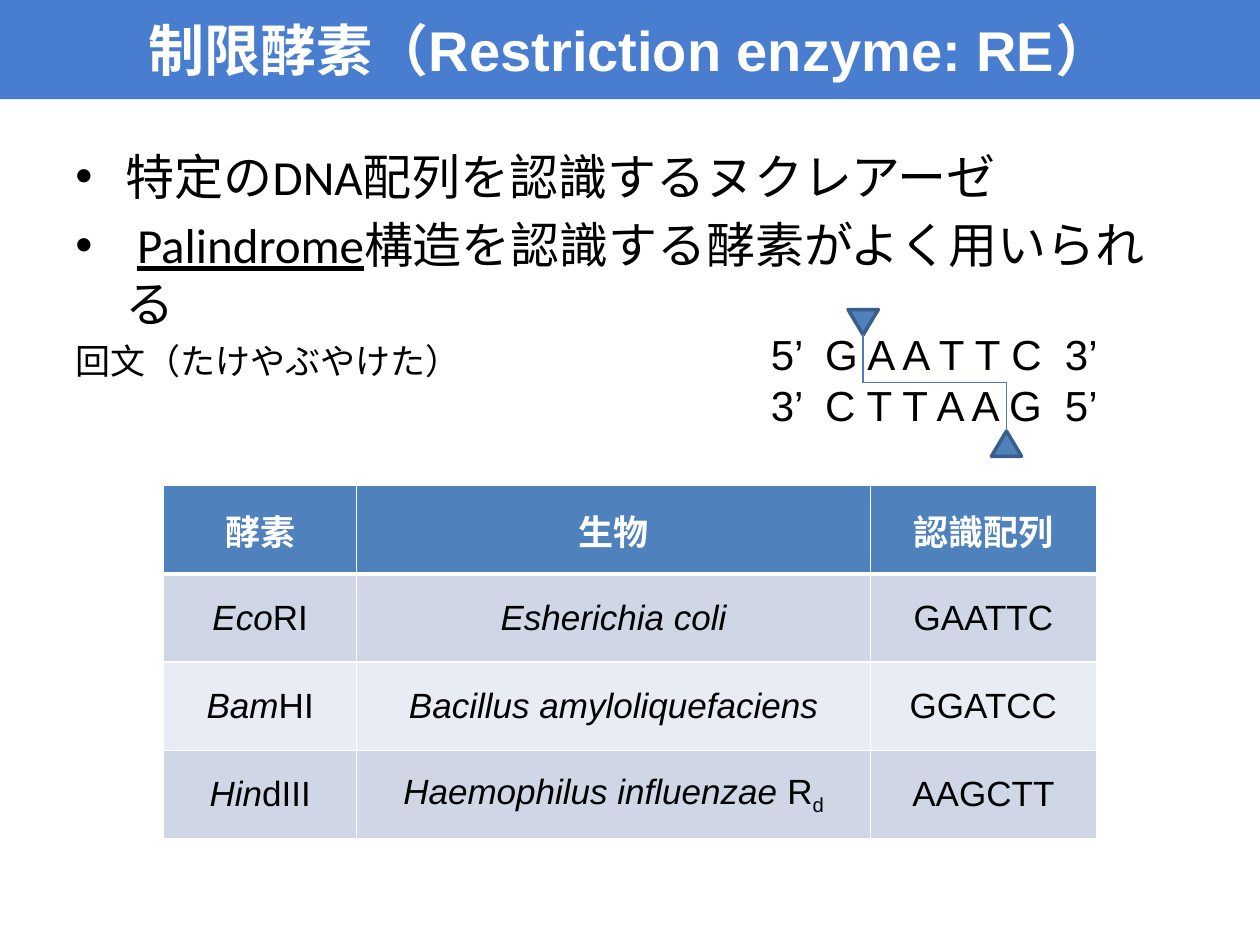
from dataclasses import dataclass

from lxml import etree
from pptx import Presentation
from pptx.dml.color import RGBColor
from pptx.enum.shapes import MSO_CONNECTOR, MSO_SHAPE
from pptx.enum.text import MSO_ANCHOR, MSO_AUTO_SIZE, PP_ALIGN
from pptx.oxml.ns import qn
from pptx.util import Cm, Pt

ELBOW = MSO_CONNECTOR.ELBOW
RECTANGLE = MSO_SHAPE.RECTANGLE
TRIANGLE = MSO_SHAPE.ISOSCELES_TRIANGLE
MIDDLE = MSO_ANCHOR.MIDDLE
TOP = MSO_ANCHOR.TOP
CENTER = PP_ALIGN.CENTER
NO_AUTOFIT = MSO_AUTO_SIZE.NONE
TITLE_ONLY = 5


@dataclass(frozen=True)
class Theme:
    heading_font: str = "Arial"
    body_font: str = "Calibri"
    title_size: int = 32
    body_size: int = 28
    sequence_size: int = 24
    small_size: int = 20
    white: str = "FFFFFF"
    black: str = "000000"
    banner: str = "487DCF"
    accent: str = "4F81BD"
    accent_edge: str = "395E89"
    cut_line: str = "4A7DBA"
    bands: tuple = ("CFD7E7", "E8ECF4")


THEME = Theme()


def color(value):
    return RGBColor.from_string(value)


def add_run(paragraph, text, size, font=THEME.heading_font, fill=THEME.black,
            bold=False, italic=False, underline=False):
    run = paragraph.add_run()
    run.text = text
    run.font.size = Pt(size)
    run.font.name = font
    run.font.bold = bold
    run.font.italic = italic
    run.font.underline = underline
    run.font.color.rgb = color(fill)
    return run


def add_bullet(paragraph, indent):
    properties = paragraph._p.get_or_add_pPr()
    properties.set("marL", str(indent))
    properties.set("indent", str(-indent))
    bullet_color = etree.SubElement(properties, qn("a:buClr"))
    etree.SubElement(bullet_color, qn("a:srgbClr"), val=THEME.black)
    etree.SubElement(properties, qn("a:buFont"), typeface="Arial")
    etree.SubElement(properties, qn("a:buChar"), char="•")


def add_title(slide, width):
    title = slide.shapes.title
    title.left, title.top, title.width, title.height = 0, 0, width, Cm(1.98)
    banner = slide.shapes.add_shape(RECTANGLE, 0, 0, width, Cm(2))
    banner.shadow.inherit = False
    banner.fill.solid()
    banner.fill.fore_color.rgb = color(THEME.banner)
    banner.line.fill.background()
    title.element.addprevious(banner.element)

    frame = title.text_frame
    frame.vertical_anchor = MIDDLE
    frame.auto_size = NO_AUTOFIT
    paragraph = frame.paragraphs[0]
    paragraph.alignment = CENTER
    add_run(paragraph, "制限酵素（Restriction enzyme: RE）", THEME.title_size,
            fill=THEME.white, bold=True)


def add_text_box(slide, left, top, width, height):
    frame = slide.shapes.add_textbox(left, top, width, height).text_frame
    frame.word_wrap = True
    frame.vertical_anchor = TOP
    return frame


def add_body(slide):
    frame = add_text_box(slide, Cm(1.27), Cm(2.82), Cm(22.86), Cm(14.2))
    definition = frame.paragraphs[0]
    add_bullet(definition, Cm(1.02))
    add_run(definition, "特定のDNA配列を認識するヌクレアーゼ", THEME.body_size, THEME.body_font)

    palindrome = frame.add_paragraph()
    add_bullet(palindrome, Cm(1.02))
    palindrome.space_before = Pt(5.6)
    for text, underline in ((" ", False), ("Palindrome", True),
                            ("構造を認識する酵素がよく用いられる", False)):
        add_run(palindrome, text, THEME.body_size, THEME.body_font, underline=underline)

    example = frame.add_paragraph()
    example.space_before = Pt(4)
    add_run(example, "回文（たけやぶやけた）", THEME.small_size, THEME.body_font)


def set_bottom_border(cell, width):
    border = etree.Element(qn("a:lnB"), w=str(width))
    fill = etree.SubElement(border, qn("a:solidFill"))
    etree.SubElement(fill, qn("a:srgbClr"), val=THEME.white)
    cell._tc.get_or_add_tcPr().insert(0, border)


def fill_cell(cell, runs, fill, header):
    cell.fill.solid()
    cell.fill.fore_color.rgb = color(fill)
    cell.vertical_anchor = MIDDLE
    paragraph = cell.text_frame.paragraphs[0]
    paragraph.alignment = CENTER
    for text, style in runs:
        run = add_run(paragraph, text, THEME.small_size, bold=header,
                      italic=style == "italic",
                      fill=THEME.white if header else THEME.black)
        if style == "subscript":
            run.font._element.set("baseline", "-25000")
    if header:
        set_bottom_border(cell, Pt(3))


def add_enzyme_table(slide):
    rows = [
        [[("酵素", "")], [("生物", "")], [("認識配列", "")]],
        [[("Eco", "italic"), ("RI", "")], [("Esherichia coli", "italic")],
         [("GAATTC", "")]],
        [[("Bam", "italic"), ("HI", "")], [("Bacillus amyloliquefaciens", "italic")],
         [("GGATCC", "")]],
        [[("Hin", "italic"), ("dIII", "")],
         [("Haemophilus influenzae ", "italic"), ("R", ""), ("d", "subscript")],
         [("AAGCTT", "")]],
    ]
    widths = [Cm(3.89), Cm(10.36), Cm(4.55)]
    row_height = Cm(1.78)
    table = slide.shapes.add_table(len(rows), len(widths), Cm(3.3), Cm(9.79),
                                   sum(widths), row_height * len(rows)).table
    for column, width in zip(table.columns, widths):
        column.width = width
    for row_index, row in enumerate(rows):
        header = row_index == 0
        fill = THEME.accent if header else THEME.bands[(row_index - 1) % 2]
        for column_index, runs in enumerate(row):
            fill_cell(table.cell(row_index, column_index), runs, fill, header)


def add_sequence(slide):
    frame = add_text_box(slide, Cm(15.29), Cm(6.5), Cm(7.16), Cm(2.31))
    add_run(frame.paragraphs[0], "5’  G A A T T C  3’", THEME.sequence_size)
    add_run(frame.add_paragraph(), "3’  C T T A A G  5’", THEME.sequence_size)


def add_cut_marker(slide, center_x, top, rotation):
    width, height = Cm(0.61), Cm(0.51)
    marker = slide.shapes.add_shape(TRIANGLE, center_x - width // 2, top, width, height)
    marker.rotation = rotation
    marker.shadow.inherit = False
    marker.fill.solid()
    marker.fill.fore_color.rgb = color(THEME.accent)
    marker.line.color.rgb = color(THEME.accent_edge)
    marker.line.width = Pt(2)


def add_vertical_elbow(slide, start_x, start_y, end_x, end_y):
    center_x, center_y = (start_x + end_x) // 2, (start_y + end_y) // 2
    half_width, half_height = (end_y - start_y) // 2, (end_x - start_x) // 2
    elbow = slide.shapes.add_connector(
        ELBOW, center_x + half_width, center_y - half_height,
        center_x - half_width, center_y + half_height)
    elbow.element.spPr.find(qn("a:xfrm")).set("rot", str(270 * 60000))
    elbow.line.color.rgb = color(THEME.cut_line)
    elbow.line.width = Pt(0.75)
    etree.SubElement(elbow.element.spPr, qn("a:effectLst"))


def add_cut_site(slide):
    upper_x, lower_x = Cm(17.4), Cm(20.29)
    upper_y, lower_y = Cm(6.74), Cm(8.69)
    add_cut_marker(slide, lower_x, lower_y, 0)
    add_cut_marker(slide, upper_x, Cm(6.24), 180)
    add_vertical_elbow(slide, upper_x, upper_y, lower_x, lower_y)


def main():
    presentation = Presentation()
    presentation.slide_width = Cm(25.4)
    presentation.slide_height = Cm(19.05)
    slide = presentation.slides.add_slide(presentation.slide_layouts[TITLE_ONLY])
    add_title(slide, presentation.slide_width)
    add_body(slide)
    add_enzyme_table(slide)
    add_sequence(slide)
    add_cut_site(slide)
    presentation.save("out.pptx")


if __name__ == "__main__":
    main()
